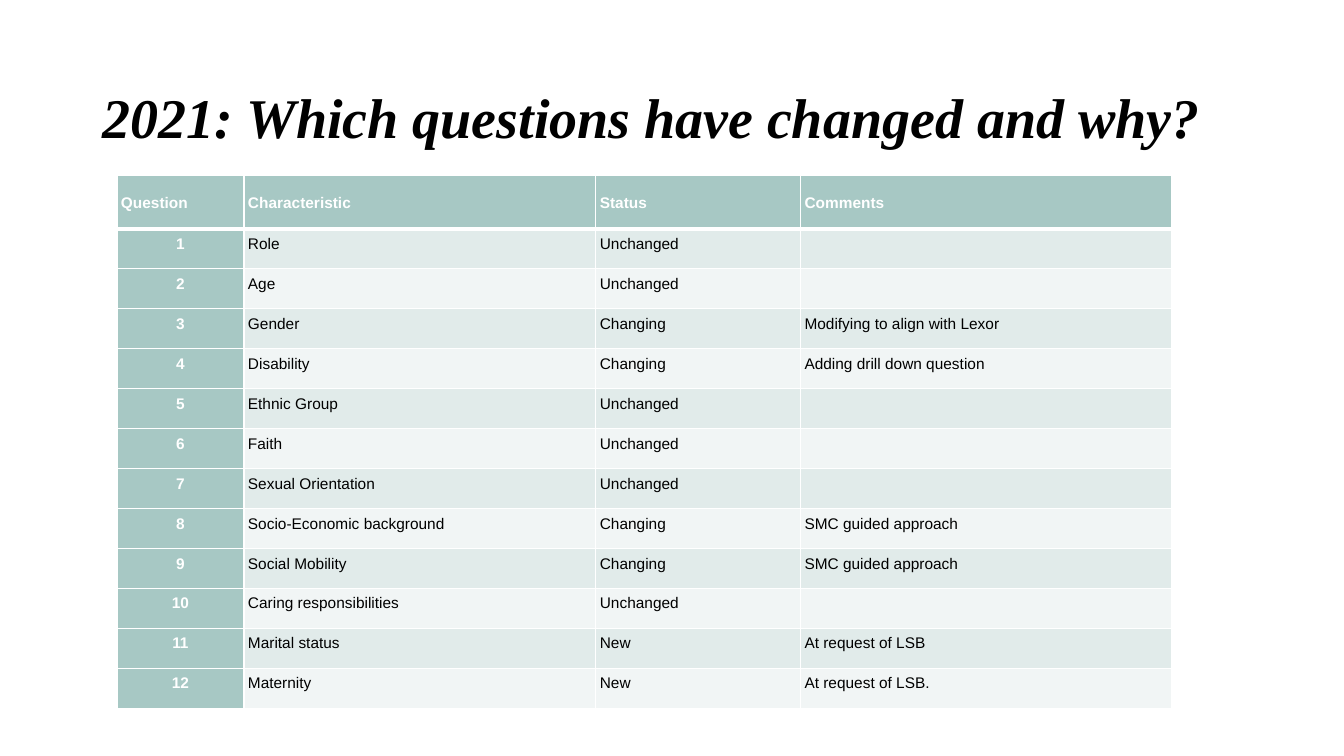
from dataclasses import dataclass

from lxml import etree
from pptx import Presentation
from pptx.dml.color import RGBColor
from pptx.enum import text
from pptx.oxml import ns
from pptx.util import Inches, Pt


@dataclass(frozen=True)
class Theme:
    ink: str = "000000"
    white: str = "FFFFFF"
    teal: str = "A7C8C4"
    bands: tuple = ("E1EBEA", "F1F5F5")
    serif: str = "Times New Roman"
    sans: str = "Arial"
    title: int = 40
    body: int = 11
    rule: int = 1
    thick: int = 3


THEME = Theme()
HEADS = ("Question", "Characteristic", "Status", "Comments")
ITEMS = (
    ("Role", "Unchanged", ""),
    ("Age", "Unchanged", ""),
    ("Gender", "Changing", "Modifying to align with Lexor"),
    ("Disability", "Changing", "Adding drill down question"),
    ("Ethnic Group", "Unchanged", ""),
    ("Faith", "Unchanged", ""),
    ("Sexual Orientation", "Unchanged", ""),
    ("Socio-Economic background", "Changing", "SMC guided approach"),
    ("Social Mobility", "Changing", "SMC guided approach"),
    ("Caring responsibilities", "Unchanged", ""),
    ("Marital status", "New", "At request of LSB"),
    ("Maternity", "New", "At request of LSB."),
)
WIDTHS = (1.26, 3.49, 2.03, 3.68)
HEAD_HIGH = 0.53
FULL_HIGH = 5.29


def set_font(para, name, size, color, bold, italic=False):
    font = para.font
    font.name, font.size = name, Pt(size)
    font.bold, font.italic = bold, italic
    font.color.rgb = RGBColor.from_string(color)


def add_title(slide, words):
    title = slide.shapes.title
    title.left, title.top = Inches(0.92), Inches(0.47)
    title.width, title.height = Inches(11.96), Inches(1.45)
    frame = title.text_frame
    frame.text = words
    frame.auto_size = text.MSO_AUTO_SIZE.NONE
    frame.vertical_anchor = text.MSO_ANCHOR.MIDDLE
    para = frame.paragraphs[0]
    para.alignment = text.PP_ALIGN.LEFT
    para.line_spacing = 0.9
    set_font(para, THEME.serif, THEME.title, THEME.ink, True, True)


def add_rules(cell, row):
    """Draw the cell's borders, thick where the header meets the body."""
    props = cell._tc.get_or_add_tcPr()
    for side in "LRTB":
        joint = (row, side) in ((0, "B"), (1, "T"))
        width = Pt(THEME.thick if joint else THEME.rule)
        line = etree.SubElement(props, ns.qn(f"a:ln{side}"), w=str(width))
        fill = etree.SubElement(line, ns.qn("a:solidFill"))
        etree.SubElement(fill, ns.qn("a:srgbClr"), val=THEME.white)


def fill_cell(cell, words, row, col):
    head, label = row == 0, row == 0 or col == 0
    add_rules(cell, row)
    cell.fill.solid()
    shade = THEME.teal if label else THEME.bands[(row - 1) % 2]
    cell.fill.fore_color.rgb = RGBColor.from_string(shade)
    cell.margin_left = cell.margin_right = Inches(0.04)
    cell.margin_top = cell.margin_bottom = Inches(0.04)
    cell.vertical_anchor = text.MSO_ANCHOR.MIDDLE if head else text.MSO_ANCHOR.TOP
    if not words:
        return
    cell.text = words
    para = cell.text_frame.paragraphs[0]
    para.line_spacing = 1.15
    para.space_after = Pt(0 if head else 6)
    centred = label and not head
    para.alignment = text.PP_ALIGN.CENTER if centred else text.PP_ALIGN.LEFT
    indent = Inches(0.25)
    props = para._p.get_or_add_pPr()
    props.set("marL", str(indent))
    props.set("indent", str(-indent))
    set_font(para, THEME.sans, THEME.body, THEME.white if label else THEME.ink, label)


def add_grid(slide):
    rows = [HEADS] + [(str(num), *item) for num, item in enumerate(ITEMS, 1)]
    frame = slide.shapes.add_table(
        len(rows), len(HEADS), Inches(1.16), Inches(1.74),
        Inches(sum(WIDTHS)), Inches(FULL_HIGH))
    table = frame.table
    table.first_col, table.horz_banding = True, False
    for col, width in zip(table.columns, WIDTHS):
        col.width = Inches(width)
    for row in table.rows:
        row.height = Inches((FULL_HIGH - HEAD_HIGH) / len(ITEMS))
    table.rows[0].height = Inches(HEAD_HIGH)
    for row, values in enumerate(rows):
        for col, words in enumerate(values):
            fill_cell(table.cell(row, col), words, row, col)


def main():
    deck = Presentation()
    deck.slide_width, deck.slide_height = Inches(13.33), Inches(7.5)
    slide = deck.slides.add_slide(deck.slide_layouts.get_by_name("Title Only"))
    add_title(slide, "2021: Which questions have changed and why?")
    add_grid(slide)
    deck.save("out.pptx")


if __name__ == "__main__":
    main()
